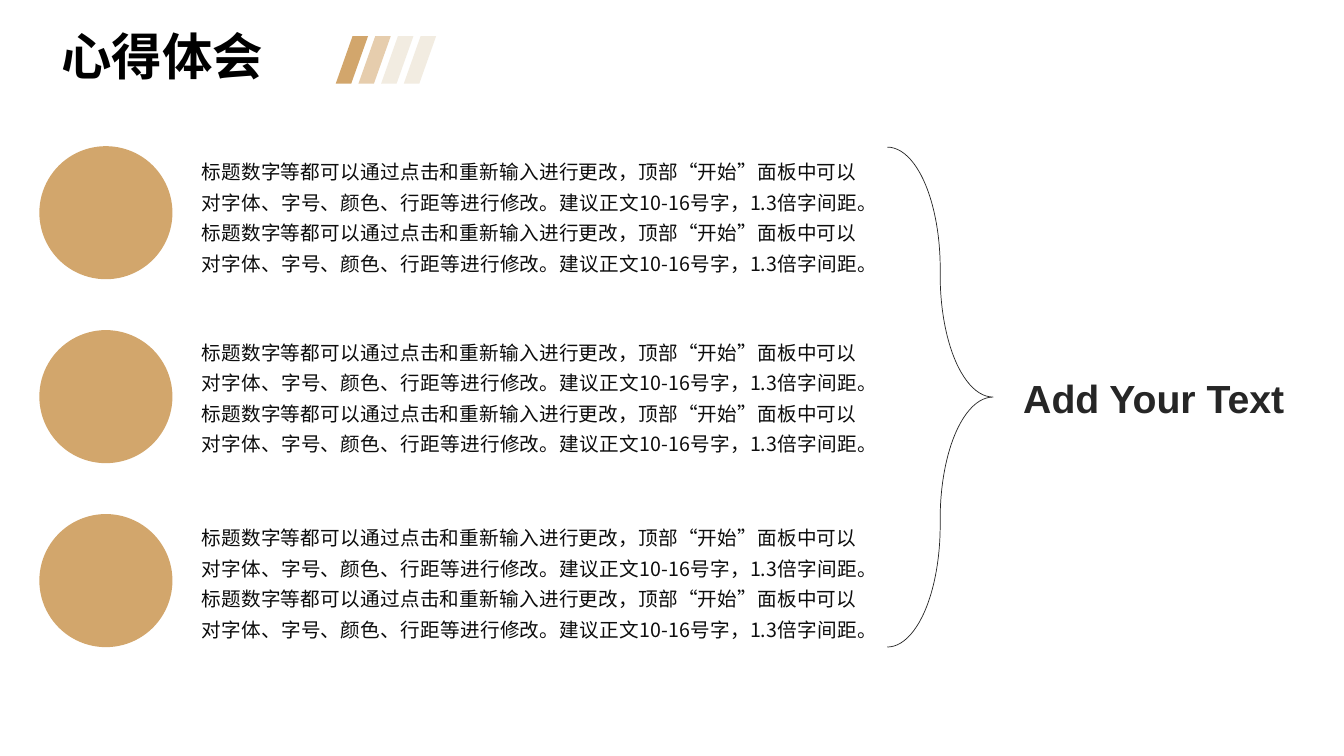
import pptx
import pptx.util
import pptx.dml.color
import pptx.enum.shapes
import pptx.enum.text
import pptx.oxml.ns
import lxml.etree

Inches = pptx.util.Inches
Pt = pptx.util.Pt
SHAPES = pptx.enum.shapes.MSO_SHAPE
ALIGN = pptx.enum.text.PP_ALIGN

HEADING = "心得体会"
ADVICE = (
    "标题数字等都可以通过点击和重新输入进行更改，顶部“开始”面板中可以"
    "对字体、字号、颜色、行距等进行修改。建议正文10-16号字，1.3倍字间距。"
)
INSIGHTS = [(1.47, ADVICE * 2), (3.26, ADVICE * 2), (5.1, ADVICE * 2)]
CONCLUSION = "Add Your Text"
COLORS = {
    "gold": "D2A66C",
    "sand": "E6CDAD",
    "cream": "F2ECE1",
    "body": "0D0D0D",
    "dark": "262626",
    "black": "000000",
}
STRIPES = ["gold", "sand", "cream", "cream"]
CJK = "Noto Sans CJK SC"


def rgb(name):
    return pptx.dml.color.RGBColor.from_string(COLORS[name])


def write(box, text, *, size, color, font=CJK, bold=False, align=ALIGN.LEFT,
          spacing=1.0, before=0, wrap=True):
    frame = box.text_frame
    frame.word_wrap = wrap
    frame.auto_size = pptx.enum.text.MSO_AUTO_SIZE.SHAPE_TO_FIT_TEXT
    frame.vertical_anchor = pptx.enum.text.MSO_ANCHOR.TOP
    paragraph = frame.paragraphs[0]
    paragraph.alignment = align
    paragraph.line_spacing = spacing
    paragraph.space_before = Pt(before)
    run = paragraph.add_run()
    run.text = text
    run.font.size = Pt(size)
    run.font.bold = bold
    run.font.name = font
    run.font.color.rgb = rgb(color)
    east_asian = lxml.etree.SubElement(run.font._element, pptx.oxml.ns.qn("a:ea"))
    east_asian.set("typeface", CJK)


def add_filled(slide, kind, left, top, width, height, color):
    shape = slide.shapes.add_shape(
        kind, Inches(left), Inches(top), Inches(width), Inches(height))
    shape.shadow.inherit = False
    shape.fill.solid()
    shape.fill.fore_color.rgb = rgb(color)
    shape.line.fill.background()
    return shape


def add_text(slide, left, top, width, height, text, **style):
    box = slide.shapes.add_textbox(
        Inches(left), Inches(top), Inches(width), Inches(height))
    write(box, text, **style)


def main():
    deck = pptx.Presentation()
    deck.slide_width, deck.slide_height = Inches(13.33), Inches(7.5)
    slide = deck.slides.add_slide(deck.slide_layouts[5])

    heading = slide.shapes.title
    heading.left, heading.top = Inches(0.51), Inches(0.27)
    heading.width, heading.height = Inches(2.94), Inches(0.65)
    write(heading, HEADING, size=36, color="black", font="Arial", bold=True,
          spacing=0.9, before=10)

    for index, color in enumerate(STRIPES):
        stripe = add_filled(slide, SHAPES.PARALLELOGRAM, 3.33 + 0.225 * index,
                            0.36, 0.32, 0.47, color)
        stripe.adjustments[0] = 0.52

    for index, (text_top, insight) in enumerate(INSIGHTS):
        add_filled(slide, SHAPES.OVAL, 0.39, 1.45 + 1.825 * index,
                   1.32, 1.32, "gold")
        add_text(slide, 1.9, text_top, 6.7, 1.33, insight, size=14,
                 color="body", align=ALIGN.JUSTIFY, spacing=1.3)

    brace = slide.shapes.add_shape(
        SHAPES.RIGHT_BRACE, Inches(8.8), Inches(1.46), Inches(1.05), Inches(4.96))
    brace.shadow.inherit = False
    brace.adjustments[0] = 1.15
    brace.adjustments[1] = 0.5
    brace.fill.background()
    brace.line.color.rgb = rgb("dark")
    brace.line.width = Pt(0.5)

    add_text(slide, 10.05, 3.66, 2.82, 0.57, CONCLUSION, size=28,
             color="dark", font="Arial", bold=True, wrap=False)

    deck.save("out.pptx")


if __name__ == "__main__":
    main()
